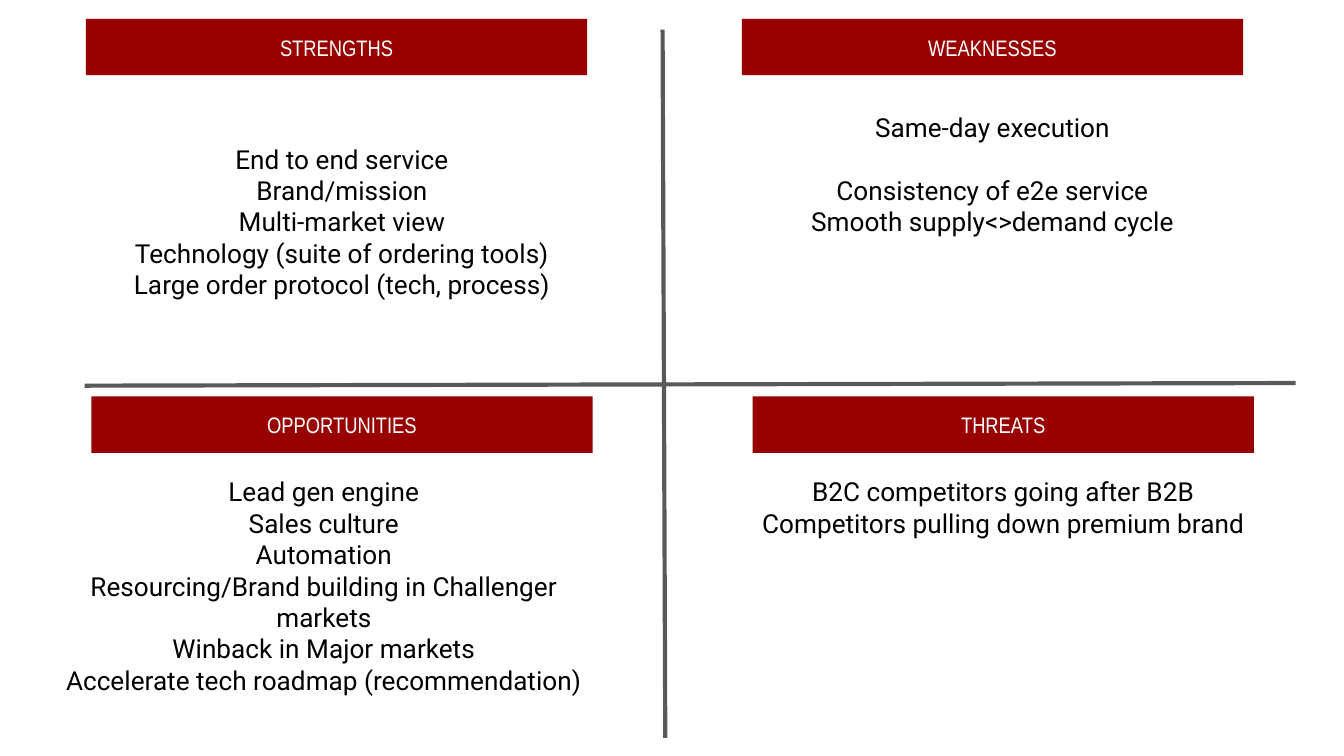
from lxml import etree
from pptx import Presentation
from pptx import util as u
from pptx.dml import color
from pptx.enum import shapes, text
from pptx.oxml import ns

RED, GREY, BLACK, WHITE = "980000", "595959", "000000", "FFFFFF"
LINE_GAP = 16.8
INSET = 7.2
HEADER_SIZE = (268.56, 30.24)
LIST_HEIGHT = 140.4
AXES = [(354.96, 15.84, 356.4, 395.28), (45.36, 206.64, 694.08, 205.2)]
QUADRANTS = [
    {"heading": "STRENGTHS", "corner": (46.08, 10.08), "list_box": (48.96, 52.56, 268.56),
     "lines": ["End to end service", "Brand/mission", "Multi-market view",
               "Technology (suite of ordering tools)", "Large order protocol (tech, process)"],
     "gap_before": 0},
    {"heading": "WEAKNESSES", "corner": (397.44, 10.08), "list_box": (397.44, 52.56, 268.56),
     "lines": ["Same-day execution", "Consistency of e2e service", "Smooth supply<>demand cycle"],
     "gap_before": 1},
    {"heading": "OPPORTUNITIES", "corner": (48.96, 212.4), "list_box": (15.12, 247.68, 316.8),
     "lines": ["Lead gen engine", "Sales culture", "Automation",
               "Resourcing/Brand building in Challenger markets", "Winback in Major markets",
               "Accelerate tech roadmap (recommendation)"]},
    {"heading": "THREATS", "corner": (403.2, 212.4), "list_box": (371.52, 247.68, 331.92),
     "lines": ["B2C competitors going after B2B", "Competitors pulling down premium brand"]},
]


def rgb(value):
    """Turn a hex string into a colour."""
    return color.RGBColor.from_string(value)


def write_text(frame, lines, size, font, fill, anchor, gap_before=None):
    """Write centred, unbulleted lines, with one blank line's gap before the given index."""
    frame.word_wrap = True
    frame.auto_size = text.MSO_AUTO_SIZE.NONE
    frame.vertical_anchor = anchor
    frame.margin_left = frame.margin_right = frame.margin_bottom = u.Pt(INSET)
    frame.margin_top = u.Pt(INSET + (LINE_GAP if gap_before == 0 else 0))
    for index, line in enumerate(lines):
        paragraph = frame.paragraphs[0] if index == 0 else frame.add_paragraph()
        paragraph.alignment = text.PP_ALIGN.CENTER
        paragraph.space_before = u.Pt(LINE_GAP if index and index == gap_before else 0)
        properties = paragraph._p.get_or_add_pPr()
        properties.set("marL", "0")
        properties.set("indent", "0")
        etree.SubElement(properties, ns.qn("a:buNone"))
        run = paragraph.add_run()
        run.text = line
        run.font.size = u.Pt(size)
        run.font.name = font
        run.font.bold = False
        run.font.color.rgb = rgb(fill)


def add_axis(slide, start_x, start_y, end_x, end_y):
    """Draw one dividing line of the matrix."""
    axis = slide.shapes.add_connector(
        shapes.MSO_CONNECTOR.STRAIGHT, u.Pt(start_x), u.Pt(start_y), u.Pt(end_x), u.Pt(end_y))
    axis.line.color.rgb = rgb(GREY)
    axis.line.width = u.Pt(2.25)
    etree.SubElement(axis._element.spPr, ns.qn("a:effectLst"))


def add_quadrant(slide, placeholder, heading, corner, list_box, lines, gap_before=None):
    """Place a heading bar at its corner and fill the list placeholder in its box."""
    left, top, width = list_box
    placeholder.left, placeholder.top = u.Pt(left), u.Pt(top)
    placeholder.width, placeholder.height = u.Pt(width), u.Pt(LIST_HEIGHT)
    write_text(placeholder.text_frame, lines, size=14, font="Roboto", fill=BLACK,
               anchor=text.MSO_ANCHOR.TOP, gap_before=gap_before)
    header = slide.shapes.add_shape(
        shapes.MSO_SHAPE.RECTANGLE, *(u.Pt(length) for length in corner + HEADER_SIZE))
    header.shadow.inherit = False
    header.fill.solid()
    header.fill.fore_color.rgb = rgb(RED)
    header.line.fill.background()
    write_text(header.text_frame, [heading], size=12, font="Arial Narrow", fill=WHITE,
               anchor=text.MSO_ANCHOR.MIDDLE)


def main():
    """Build the SWOT slide and save it."""
    presentation = Presentation()
    presentation.slide_width, presentation.slide_height = u.Pt(720), u.Pt(405)
    slide = presentation.slides.add_slide(presentation.slide_layouts.get_by_name("Comparison"))
    title = slide.shapes.title._element
    title.getparent().remove(title)
    for axis in AXES:
        add_axis(slide, *axis)
    for placeholder, quadrant in zip(list(slide.placeholders), QUADRANTS):
        add_quadrant(slide, placeholder, **quadrant)
    presentation.save("out.pptx")


if __name__ == "__main__":
    main()
